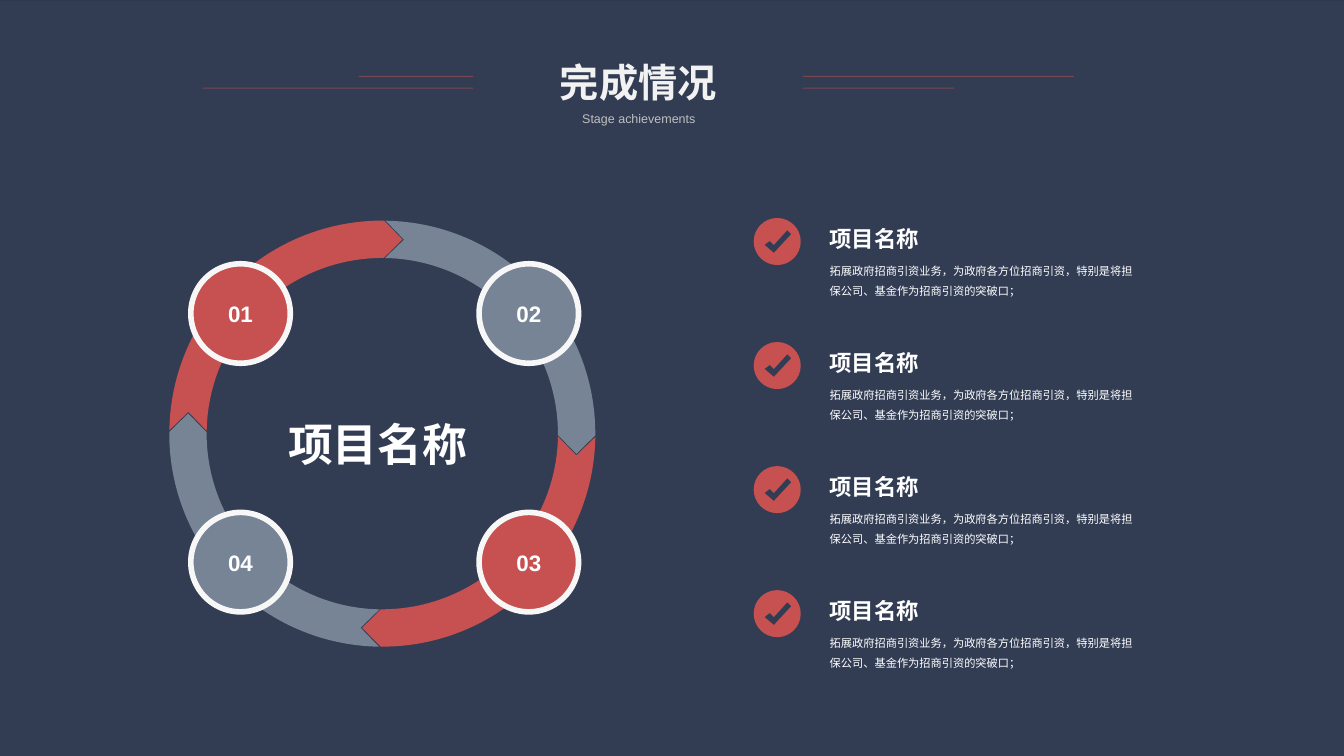
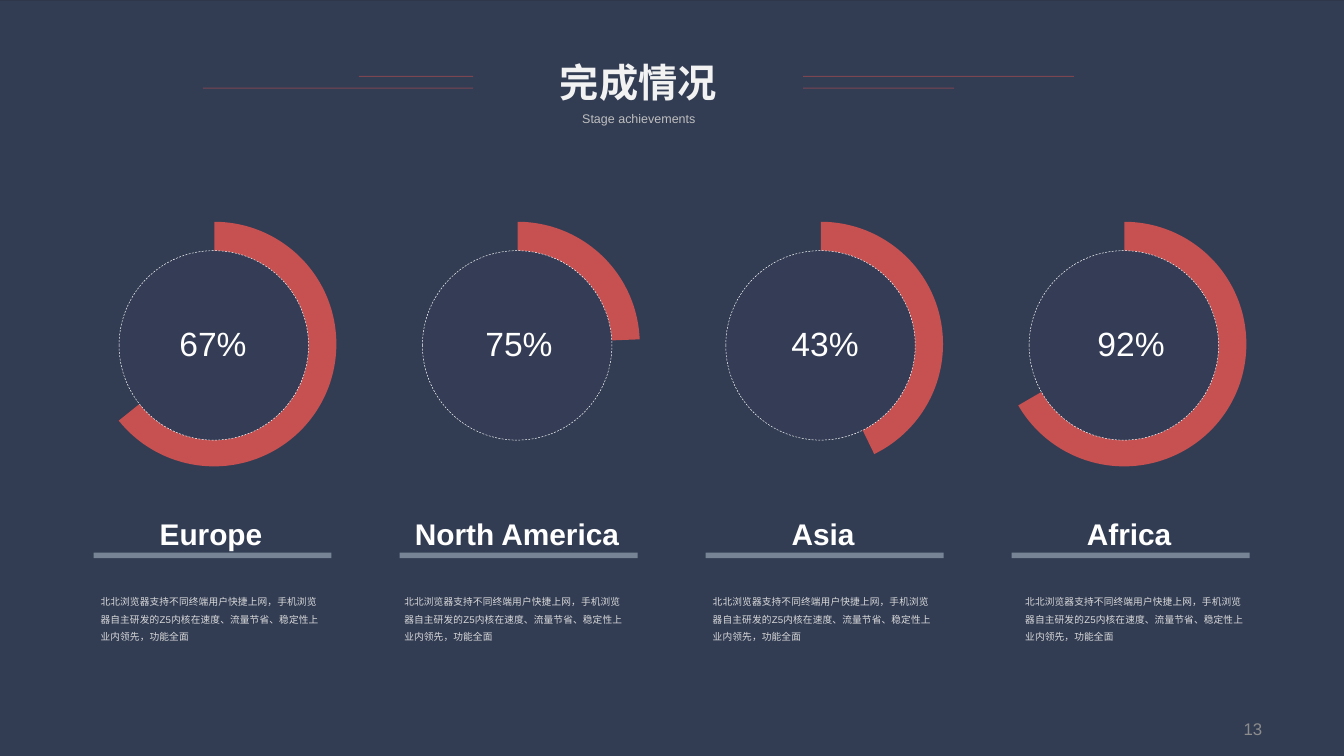
from dataclasses import dataclass
from math import cos, radians, sin, tan

from lxml import etree
from pptx import Presentation
from pptx.dml.color import RGBColor
from pptx.enum.dml import MSO_LINE
from pptx.enum.shapes import MSO_CONNECTOR, MSO_SHAPE
from pptx.enum.text import MSO_ANCHOR, MSO_AUTO_SIZE, PP_ALIGN
from pptx.oxml.ns import qn
from pptx.util import Emu, Inches, Pt

LEFT, CENTER, RIGHT = PP_ALIGN.LEFT, PP_ALIGN.CENTER, PP_ALIGN.RIGHT
TOP, MIDDLE, BOTTOM = MSO_ANCHOR.TOP, MSO_ANCHOR.MIDDLE, MSO_ANCHOR.BOTTOM
FIT, FIXED = MSO_AUTO_SIZE.SHAPE_TO_FIT_TEXT, MSO_AUTO_SIZE.NONE
RECT, OVAL, PIE = MSO_SHAPE.RECTANGLE, MSO_SHAPE.OVAL, MSO_SHAPE.PIE
STRAIGHT, DASH = MSO_CONNECTOR.STRAIGHT, MSO_LINE.DASH

BACK = RGBColor(0x40, 0x3F, 0x57)
SHADE = RGBColor(0x2C, 0x36, 0x44)
TINT = RGBColor(0x48, 0x5B, 0x92)
NAVY = RGBColor(0x34, 0x3D, 0x55)
RED = RGBColor(0xC7, 0x50, 0x50)
SLATE = RGBColor(0x77, 0x84, 0x95)
WHITE = RGBColor(0xFF, 0xFF, 0xFF)
RIM = RGBColor(0xF7, 0xF7, 0xF7)
TITLE = RGBColor(0xF2, 0xF2, 0xF2)
SUBTITLE = RGBColor(0xBF, 0xBF, 0xBF)
BODY = RGBColor(0xD9, 0xD9, 0xD9)
PAGE = RGBColor(0x8C, 0x8C, 0x8C)

FONT = "Arial"
WIDTH, HEIGHT = Inches(10), Inches(5.625)
COLS, ROWS = 100, 56.25
CELL = WIDTH / COLS

ITEM_NAME = "项目名称"
ITEM_TEXT = "拓展政府招商引资业务，为政府各方位招商引资，特别是将担保公司、基金作为招商引资的突破口；"
REGION_TEXT = "北北浏览器支持不同终端用户快捷上网，手机浏览器自主研发的Z5内核在速度、流量节省、稳定性上业内领先，功能全面"

ITEM_COUNT, ITEM_PITCH = 4, 9.23
TICK = [(1.5, 2.6), (0.8, 2), (1.2, 1.7), (1.5, 2), (2.5, 0.9), (2.8, 1.2)]
BADGE_RADIUS = 1.75
BADGE_CURVES = (0, 3, 6, 9)

RING_X, RING_Y = 28.45, 32.27
RING_OUTER, RING_INNER = 15.85, 13.07
RING_START, RING_END, RING_TIP = 0.9, 90.45, 1.39
ARROW_CURVES = (0, 3, 8, 11)

PIE_START = 270.1
PIE_PITCH, LABEL_PITCH = 22.57, 22.77


@dataclass(frozen=True)
class Box:
    col: float
    row: float
    width: float
    height: float


@dataclass(frozen=True)
class Style:
    size: float
    color: RGBColor = WHITE
    bold: bool = False
    align: PP_ALIGN = LEFT
    spacing: float = 1.0
    anchor: MSO_ANCHOR = TOP
    auto: MSO_AUTO_SIZE = FIT
    wrap: bool = True


@dataclass(frozen=True)
class Step:
    number: str
    col: float
    row: float
    color: RGBColor


@dataclass(frozen=True)
class Region:
    name: str
    value: str
    end_angle: float
    text_col: float


@dataclass(frozen=True)
class Rule:
    start: float
    end: float
    row: float


HEAD_STYLE = Style(21, TITLE, True, CENTER)
SUBHEAD_STYLE = Style(6.75, SUBTITLE, align=CENTER)
NAME_STYLE = Style(12, bold=True, spacing=1.5)
TEXT_STYLE = Style(6, spacing=1.5)
STEP_STYLE = Style(12, bold=True, align=CENTER, anchor=MIDDLE, auto=FIXED)
CORE_STYLE = Style(24, bold=True, align=CENTER, spacing=1.5)
REGION_STYLE = Style(16, bold=True, align=CENTER, spacing=1.2, auto=FIXED)
REGION_TEXT_STYLE = Style(5.25, BODY, spacing=1.5)
VALUE_STYLE = Style(18, anchor=BOTTOM, wrap=False)
PAGE_STYLE = Style(9, PAGE, align=RIGHT, anchor=MIDDLE, auto=FIXED)

RULES = [Rule(35.2, 26.7, 5.68), Rule(35.2, 15.1, 6.56),
         Rule(79.9, 59.76, 5.68), Rule(71, 59.76, 6.56)]
STEPS = [Step("02", 35.65, 19.63, SLATE), Step("03", 35.65, 38.13, RED),
         Step("04", 14.2, 38.13, SLATE), Step("01", 14.2, 19.63, RED)]
REGIONS = [Region("Europe", "67%", 141.24, 6.5),
           Region("North America", "75%", 357.79, 29.1),
           Region("Asia", "43%", 64.06, 52.05),
           Region("Africa", "92%", 149.9, 75.3)]


def grid(cells: float) -> Emu:
    return Emu(round(cells * CELL))


def place(box: Box) -> tuple:
    return grid(box.col), grid(box.row), grid(box.width), grid(box.height)


def set_alpha(sp, percent: int) -> None:
    for clr in sp._element.spPr.iter(qn("a:srgbClr")):
        etree.SubElement(clr, qn("a:alpha")).set("val", str(percent * 1000))


def write(sp, text: str, style: Style) -> None:
    tf = sp.text_frame
    tf.word_wrap = style.wrap
    tf.auto_size = style.auto
    tf.vertical_anchor = style.anchor
    p = tf.paragraphs[0]
    p.alignment = style.align
    p.line_spacing = style.spacing
    r = p.add_run()
    r.text = text
    r.font.name = FONT
    r.font.size = Pt(style.size)
    r.font.bold = style.bold
    r.font.color.rgb = style.color


def add_text(s, box: Box, text: str, style: Style) -> None:
    write(s.shapes.add_textbox(*place(box)), text, style)


def paint(sp, color: RGBColor) -> None:
    sp.shadow.inherit = False
    sp.fill.solid()
    sp.fill.fore_color.rgb = color
    sp.line.fill.background()


def add_shape(s, kind: MSO_SHAPE, box: Box, color: RGBColor):
    sp = s.shapes.add_shape(kind, *place(box))
    paint(sp, color)
    return sp


def outline(sp, color: RGBColor, width: float) -> None:
    sp.line.color.rgb = color
    sp.line.width = Pt(width)


def bend(sp, curve_starts: tuple) -> None:
    lines = list(sp._element.spPr.iter(qn("a:lnTo")))
    for i in curve_starts:
        curve = etree.Element(qn("a:cubicBezTo"))
        lines[i].addprevious(curve)
        for line in lines[i:i + 3]:
            curve.append(line[0])
            line.getparent().remove(line)


def add_outline(s, contours: list, curve_starts: tuple, color: RGBColor) -> None:
    paths = [[(grid(x), grid(y)) for x, y in pts] for pts in contours]
    fb = s.shapes.build_freeform(*paths[0][0])
    fb.add_line_segments(paths[0][1:], close=True)
    for pts in paths[1:]:
        fb.move_to(*pts[0])
        fb.add_line_segments(pts[1:], close=True)
    sp = fb.convert_to_shape()
    bend(sp, curve_starts)
    paint(sp, color)


def polar(x: float, y: float, radius: float, angle: float, along: float = 0) -> tuple:
    a = radians(angle)
    return (x + radius * sin(a) + along * cos(a),
            y - radius * cos(a) + along * sin(a))


def arc(x: float, y: float, radius: float, start: float, end: float, spans: int) -> list:
    turn = (end - start) / spans
    handle = radius * 4 / 3 * tan(radians(turn) / 4)
    pts = [polar(x, y, radius, start)]
    for i in range(spans):
        a, b = start + turn * i, start + turn * (i + 1)
        pts += [polar(x, y, radius, a, handle),
                polar(x, y, radius, b, -handle),
                polar(x, y, radius, b)]
    return pts


def add_header(s) -> None:
    add_text(s, Box(38.9, 7.75, 17.3, 2.1), "Stage achievements", SUBHEAD_STYLE)
    add_text(s, Box(36.3, 3.85, 22.4, 4.5), "完成情况", HEAD_STYLE)
    for rule in RULES:
        line = s.shapes.add_connector(STRAIGHT, grid(rule.start), grid(rule.row),
                                      grid(rule.end), grid(rule.row))
        outline(line, RED, 0.5)
        set_alpha(line, 50)
        etree.SubElement(line._element.spPr, qn("a:effectLst"))


def add_slide(prs):
    s = prs.slides.add_slide(prs.slide_layouts[6])
    s.background.fill.solid()
    s.background.fill.fore_color.rgb = BACK
    for row, color, percent in [(0, SHADE, 90), (0.06, TINT, 20)]:
        set_alpha(add_shape(s, RECT, Box(0, row, COLS, ROWS), color), percent)
    return s


def add_item(s, index: int) -> None:
    col, row = 56.08, 16.22 + index * ITEM_PITCH
    disc = arc(col + BADGE_RADIUS, row + BADGE_RADIUS, BADGE_RADIUS, 0, 360, 4)
    tick = [(col + x, row + y) for x, y in TICK]
    add_outline(s, [disc, tick], BADGE_CURVES, RED)
    add_text(s, Box(60.74, row - 0.96, 9.3, 3.7), ITEM_NAME, NAME_STYLE)
    add_text(s, Box(60.75, row + 2.43, 25.2, 3.9), ITEM_TEXT, TEXT_STYLE)


def add_ring_arrow(s, quarter: int, color: RGBColor) -> None:
    start, end = RING_START + 90 * quarter, RING_END + 90 * quarter
    middle = (RING_OUTER + RING_INNER) / 2
    pts = arc(RING_X, RING_Y, RING_OUTER, start, end, 2)
    pts.append(polar(RING_X, RING_Y, middle, end, RING_TIP))
    pts += arc(RING_X, RING_Y, RING_INNER, end, start, 2)
    pts.append(polar(RING_X, RING_Y, middle, start, RING_TIP))
    add_outline(s, [pts], ARROW_CURVES, color)


def build_cycle(prs) -> None:
    s = add_slide(prs)
    for i in range(ITEM_COUNT):
        add_item(s, i)
    add_header(s)
    for i, step in enumerate(STEPS):
        add_ring_arrow(s, i, step.color)
    for step in STEPS:
        sp = add_shape(s, OVAL, Box(step.col, step.row, 7.4, 7.4), step.color)
        outline(sp, RIM, 3)
        write(sp, step.number, STEP_STYLE)
    add_text(s, Box(18.15, 28.5, 19.9, 6.3), ITEM_NAME, CORE_STYLE)


def add_region_chart(s, index: int, region: Region) -> None:
    shift = index * PIE_PITCH
    pie = add_shape(s, PIE, Box(6.83 + shift, 16.5, 18.2, 18.2), RED)
    for i, angle in enumerate((PIE_START, region.end_angle)):
        pie.adjustments[i] = angle * 0.6
    hub = add_shape(s, OVAL, Box(8.86 + shift, 18.65, 14.1, 14.1), NAVY)
    outline(hub, WHITE, 0.25)
    hub.line.dash_style = DASH


def add_region_text(s, index: int, region: Region) -> None:
    shift = index * LABEL_PITCH
    add_text(s, Box(4.8 + shift, 37.33, 21.8, 3.9), region.name, REGION_STYLE)
    add_shape(s, RECT, Box(6.97 + shift, 41.13, 17.7, 0.4), SLATE)
    add_text(s, Box(region.text_col, 43.4, 18.3, 5), REGION_TEXT, REGION_TEXT_STYLE)
    add_text(s, Box(12.36 + shift, 23.54, 7.2, 4), region.value, VALUE_STYLE)


def build_regions(prs) -> None:
    s = add_slide(prs)
    add_text(s, Box(90.2, 52.2, 4.7, 4), "13", PAGE_STYLE)
    for i, region in enumerate(REGIONS):
        add_region_chart(s, i, region)
        add_region_text(s, i, region)
    add_header(s)


def main() -> None:
    prs = Presentation()
    prs.slide_width, prs.slide_height = WIDTH, HEIGHT
    build_cycle(prs)
    build_regions(prs)
    prs.save("out.pptx")


if __name__ == "__main__":
    main()
